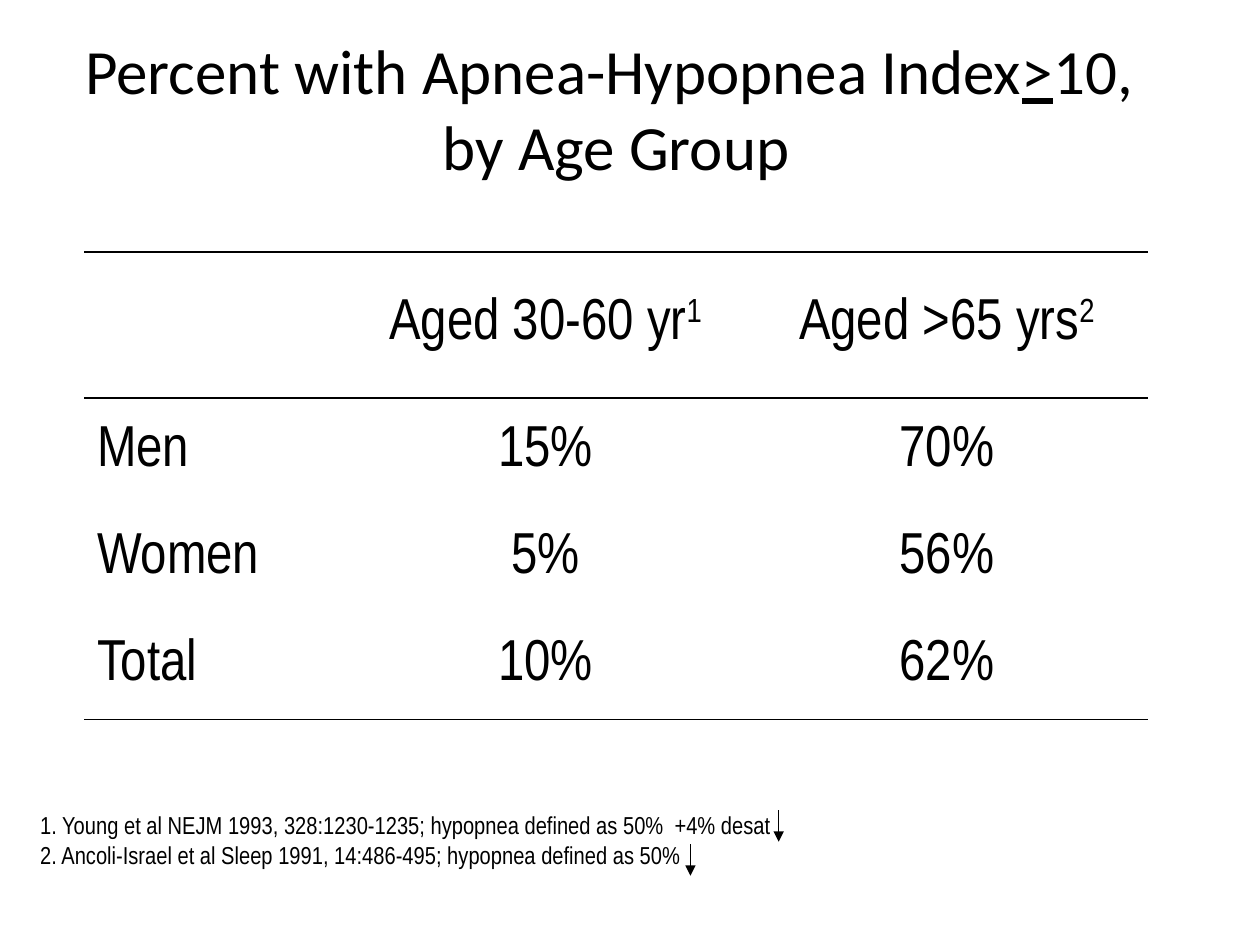
"""Build a slide comparing apnea-hypopnea prevalence by age group."""
import pptx
import pptx.dml.color
import pptx.enum.shapes
import pptx.enum.text
import pptx.oxml
import pptx.oxml.ns
import pptx.util
import lxml.etree

ALIGN = pptx.enum.text.PP_ALIGN
MIDDLE = pptx.enum.text.MSO_ANCHOR.MIDDLE
QN = pptx.oxml.ns.qn


def colour(code):
    """Turn a hex string into a colour."""
    return pptx.dml.color.RGBColor.from_string(code)


def child(parent, tag, **attributes):
    """Append an XML child in the drawing namespace."""
    return lxml.etree.SubElement(parent, QN("a:" + tag), attributes)


class SlideBuilder:
    """Hold the style and the current slide on a 100 by 75 grid."""

    ink = "000000"
    heading_font = "Calibri"
    body_font = "Arial Narrow"

    def __init__(self, deck):
        """Add a title-only slide to the deck."""
        self.unit = deck.slide_width / 100
        self.slide = deck.slides.add_slide(deck.slide_layouts[5])

    def grid(self, *counts):
        """Turn counts of grid units into lengths."""
        return [pptx.util.Emu(round(count * self.unit)) for count in counts]

    def run(self, para, text, size, font, underline=None, raised=False):
        """Add one styled run to a paragraph."""
        span = para.add_run()
        span.text = text
        span.font.name = font
        span.font.size = pptx.util.Pt(size)
        span.font.color.rgb = colour(self.ink)
        span.font.underline = underline
        if raised:
            span.font._element.set("baseline", "30000")

    def title(self, place, lines, size=36):
        """Fill the title from lines of (text, underlined) pairs."""
        box = self.slide.shapes.title
        box.left, box.top, box.width, box.height = self.grid(*place)
        frame = box.text_frame
        frame.word_wrap = True
        frame.auto_size = pptx.enum.text.MSO_AUTO_SIZE.NONE
        frame.vertical_anchor = MIDDLE
        para = frame.paragraphs[0]
        para.alignment = ALIGN.CENTER
        for index, line in enumerate(lines):
            if index:
                para.add_line_break()
            for text, underlined in line:
                self.run(para, text, size, self.heading_font, underlined)

    def cell(self, cell, spans, align, ruled, size=33):
        """Write a cell and rule the sides named in ruled."""
        cell.vertical_anchor = MIDDLE
        cell.fill.background()
        para = cell.text_frame.paragraphs[0]
        para.alignment = align
        para.line_spacing = 0.9
        properties = para._p.get_or_add_pPr()
        for tag, share in (("spcBef", "45000"), ("spcAft", "15000")):
            child(child(properties, tag), "spcPct", val=share)
        for index, text in enumerate(spans):
            self.run(para, text, size, self.body_font, raised=index > 0)
        borders = cell._tc.get_or_add_tcPr()
        for index, side in enumerate("LRTB"):
            border = child(borders, "ln" + side, w="12700")
            if side in ruled:
                child(child(border, "solidFill"), "srgbClr", val=self.ink)
            else:
                child(border, "noFill")
            borders.insert(index, border)

    def table(self, place, widths, heights, rows):
        """Add an open table ruled above, below and under its header."""
        frame = self.slide.shapes.add_table(len(rows), len(widths), *self.grid(*place))
        table = frame.table
        table.first_row = table.horz_banding = False
        for column, width in zip(table.columns, self.grid(*widths)):
            column.width = width
        for row, height in zip(table.rows, self.grid(*heights)):
            row.height = height
        for r, row in enumerate(rows):
            ruled = {0: "TB", 1: "T", len(rows) - 1: "B"}.get(r, "")
            for c, spans in enumerate(row):
                align = ALIGN.CENTER if c else ALIGN.LEFT
                self.cell(table.cell(r, c), spans, align, ruled)

    def footnotes(self, place, notes, size=14):
        """Add footnotes with hanging indents."""
        frame = self.slide.shapes.add_textbox(*self.grid(*place)).text_frame
        frame.word_wrap = True
        frame.vertical_anchor = MIDDLE
        hang = str(pptx.util.Inches(0.5))
        for index, note in enumerate(notes):
            para = frame.add_paragraph() if index else frame.paragraphs[0]
            properties = para._p.get_or_add_pPr()
            properties.set("marL", hang)
            properties.set("indent", "-" + hang)
            self.run(para, note, size, self.body_font)

    def down_arrow(self, x, y, length=2.5):
        """Draw a thin arrow pointing down."""
        arrow = self.slide.shapes.add_connector(
            pptx.enum.shapes.MSO_CONNECTOR.STRAIGHT, *self.grid(x, y, x, y + length))
        arrow.line.color.rgb = colour(self.ink)
        arrow.line.width = pptx.util.Pt(0.75)
        child(arrow.line._get_or_add_ln(), "tailEnd", type="triangle")
        child(arrow._element.spPr, "effectLst")


def main():
    """Build and save the deck."""
    deck = pptx.Presentation()
    deck.slide_width, deck.slide_height = pptx.util.Inches(10), pptx.util.Inches(7.5)
    page = SlideBuilder(deck)
    page.title((2.8, 3.5, 92.2, 10), [
        [("Percent with Apnea-Hypopnea Index", None), (">", True), ("10, ", None)],
        [("by Age Group", None)],
    ])
    page.table((6.7, 20, 84.4, 37.1), (20.7, 31.8, 31.9), (11.6, 8.5, 8.5, 8.5), [
        [[], ["Aged 30-60 yr", "1"], ["Aged >65 yrs", "2"]],
        [["Men"], ["15%"], ["70%"]],
        [["Women"], ["5%"], ["56%"]],
        [["Total"], ["10%"], ["62%"]],
    ])
    page.footnotes((2.2, 62.5, 95.6, 8.3), [
        "1. Young et al NEJM 1993, 328:1230-1235; hypopnea defined as 50%  +4% desat",
        "2. Ancoli-Israel et al Sleep 1991, 14:486-495; hypopnea defined as 50%",
    ])
    page.down_arrow(61.8, 64.3)
    page.down_arrow(54.8, 67)
    deck.save("out.pptx")


if __name__ == "__main__":
    main()
